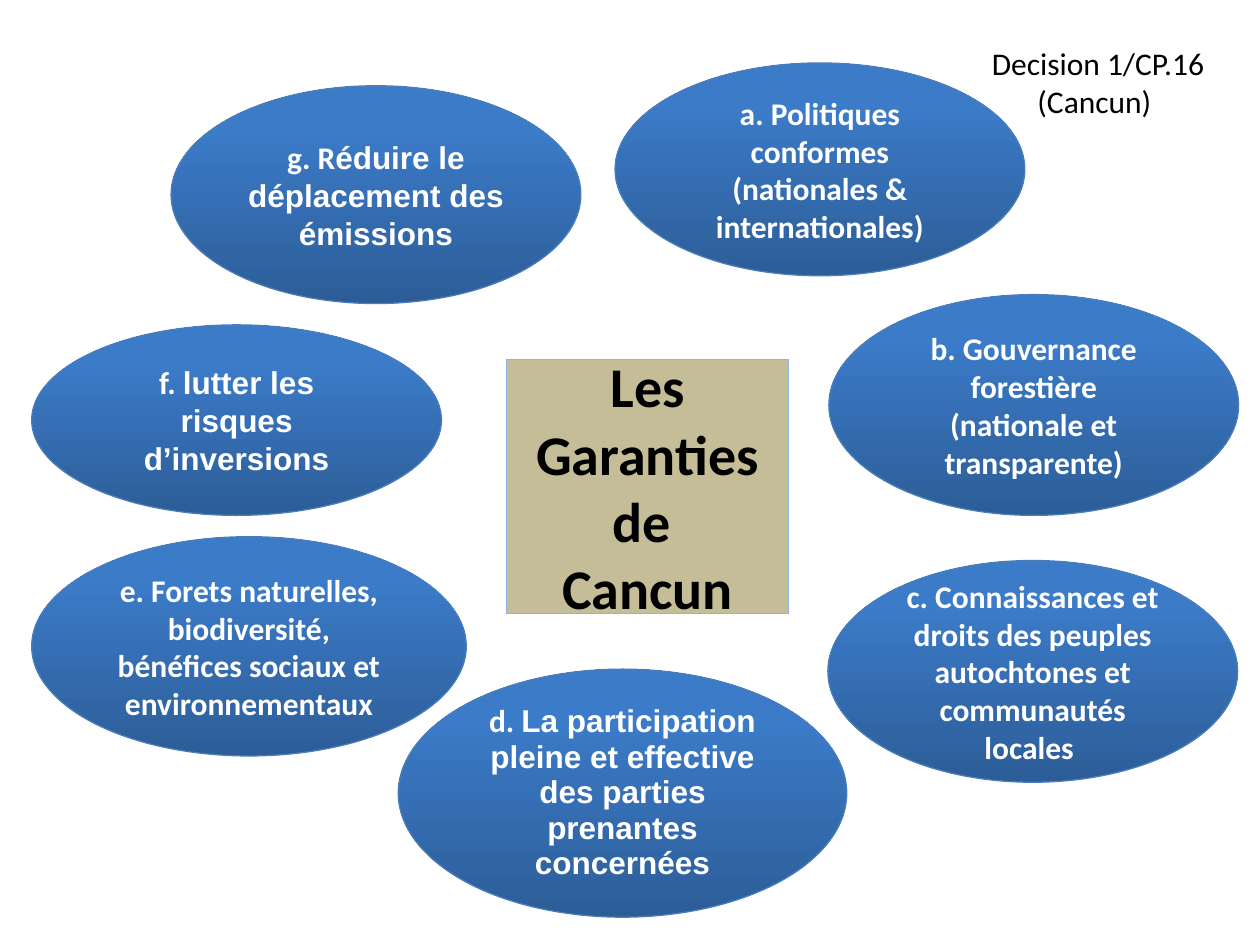
from copy import deepcopy
from dataclasses import dataclass

from pptx import Presentation
from pptx.dml.color import RGBColor
from pptx.enum.shapes import MSO_SHAPE
from pptx.enum.text import MSO_ANCHOR, MSO_AUTO_SIZE, PP_ALIGN
from pptx.util import Cm, Pt

WHITE = RGBColor(0xFF, 0xFF, 0xFF)
BLACK = RGBColor(0x00, 0x00, 0x00)
TAN = RGBColor(0xC4, 0xBD, 0x97)
LIGHT_BLUE = RGBColor(0x8C, 0xB3, 0xE3)
OUTLINE_BLUE = RGBColor(0x4A, 0x7D, 0xBB)
GRADIENT = (
    (0, RGBColor(0x2D, 0x5D, 0x97)),
    (0.8, RGBColor(0x3B, 0x7B, 0xC8)),
    (1, RGBColor(0x3A, 0x7C, 0xCA)),
)

OVAL_WIDTH = 8.26
OVAL_FONT = {"size": Pt(18), "bold": True}
TITLE_FONT = {"size": Pt(32), "bold": True}
NOTE_FONT = {"size": Pt(18), "bold": False}


@dataclass
class Safeguard:
    """One oval: lengths in centimetres, text in Calibri then Arial."""
    left: float
    top: float
    height: float
    calibri_text: str
    arial_text: str = ""
    width: float = OVAL_WIDTH
    line_spacing: float | None = None


SAFEGUARDS = [
    Safeguard(12.4, 1.27, 4.29, "a. Politiques conformes (nationales & internationales)"),
    Safeguard(16.71, 5.94, 4.45, "b. Gouvernance forestière (nationale et transparente)"),
    Safeguard(16.69, 11.3, 4.47,
              "c. Connaissances et droits des peuples autochtones et communautés locales "),
    Safeguard(3.45, 1.73, 4.39, "g. R", "éduire le déplacement des émissions"),
    Safeguard(0.64, 6.55, 3.84, "f. ", "lutter les risques d’inversions"),
    Safeguard(0.64, 10.82, 4.42,
              "e. Forets naturelles, biodiversité, bénéfices sociaux et environnementaux",
              width=8.76),
    Safeguard(8.03, 13.49, 5, "d. ",
              "La participation pleine et effective des parties prenantes concernées",
              width=9.04, line_spacing=0.94),
]


def add_run(paragraph, text: str, name: str, color: RGBColor, font_format: dict) -> None:
    run = paragraph.add_run()
    run.text = text
    for attribute, value in {"name": name, **font_format}.items():
        setattr(run.font, attribute, value)
    run.font.color.rgb = color


def set_outline(shape, color: RGBColor) -> None:
    shape.line.color.rgb = color
    shape.line.width = Pt(0.75)


def fill_gradient(shape) -> None:
    fill = shape.fill
    fill.gradient()
    fill.gradient_angle = 90
    # The default gradient has two stops; add the third
    stop_list = shape._element.spPr.gradFill.gsLst
    stop_list.append(deepcopy(stop_list[-1]))
    for stop, (position, color) in zip(fill.gradient_stops, GRADIENT):
        stop.position = position
        stop.color.rgb = color


def add_safeguard(shapes, safeguard: Safeguard) -> None:
    oval = shapes.add_shape(
        MSO_SHAPE.OVAL, Cm(safeguard.left), Cm(safeguard.top),
        Cm(safeguard.width), Cm(safeguard.height))
    oval.shadow.inherit = False
    fill_gradient(oval)
    set_outline(oval, OUTLINE_BLUE)
    text_frame = oval.text_frame
    text_frame.word_wrap = True
    text_frame.vertical_anchor = MSO_ANCHOR.MIDDLE
    paragraph = text_frame.paragraphs[0]
    paragraph.alignment = PP_ALIGN.CENTER
    paragraph.line_spacing = safeguard.line_spacing
    add_run(paragraph, safeguard.calibri_text, "Calibri", WHITE, OVAL_FONT)
    if safeguard.arial_text:
        add_run(paragraph, safeguard.arial_text, "Arial", WHITE, OVAL_FONT)


def format_title(title) -> None:
    position = {"left": Cm(10.21), "top": Cm(7.24), "width": Cm(5.69), "height": Cm(5.13)}
    for attribute, value in position.items():
        setattr(title, attribute, value)
    title.fill.solid()
    title.fill.fore_color.rgb = TAN
    set_outline(title, LIGHT_BLUE)
    text_frame = title.text_frame
    text_frame.auto_size = MSO_AUTO_SIZE.NONE
    text_frame.word_wrap = True
    text_frame.vertical_anchor = MSO_ANCHOR.MIDDLE
    for paragraph, text in (
        (text_frame.paragraphs[0], "Les Garanties de "),
        (text_frame.add_paragraph(), "Cancun"),
    ):
        paragraph.alignment = PP_ALIGN.CENTER
        add_run(paragraph, text, "Calibri", BLACK, TITLE_FONT)


def add_decision_note(shapes) -> None:
    note = shapes.add_textbox(Cm(19), Cm(0.76), Cm(6.27), Cm(1.02))
    note.text_frame.word_wrap = True
    paragraph = note.text_frame.paragraphs[0]
    paragraph.alignment = PP_ALIGN.CENTER
    add_run(paragraph, "Decision 1/CP.16 (Cancun) ", "Calibri", BLACK, NOTE_FONT)


def main() -> None:
    presentation = Presentation()
    presentation.slide_width = Cm(25.4)
    presentation.slide_height = Cm(19.05)
    slide = presentation.slides.add_slide(presentation.slide_layouts[5])

    # Central title
    format_title(slide.shapes.title)

    # Ring of safeguards
    ring = slide.shapes.add_group_shape()
    for safeguard in SAFEGUARDS:
        add_safeguard(ring.shapes, safeguard)

    # Reference in the corner
    add_decision_note(slide.shapes)

    presentation.save("out.pptx")


if __name__ == "__main__":
    main()
